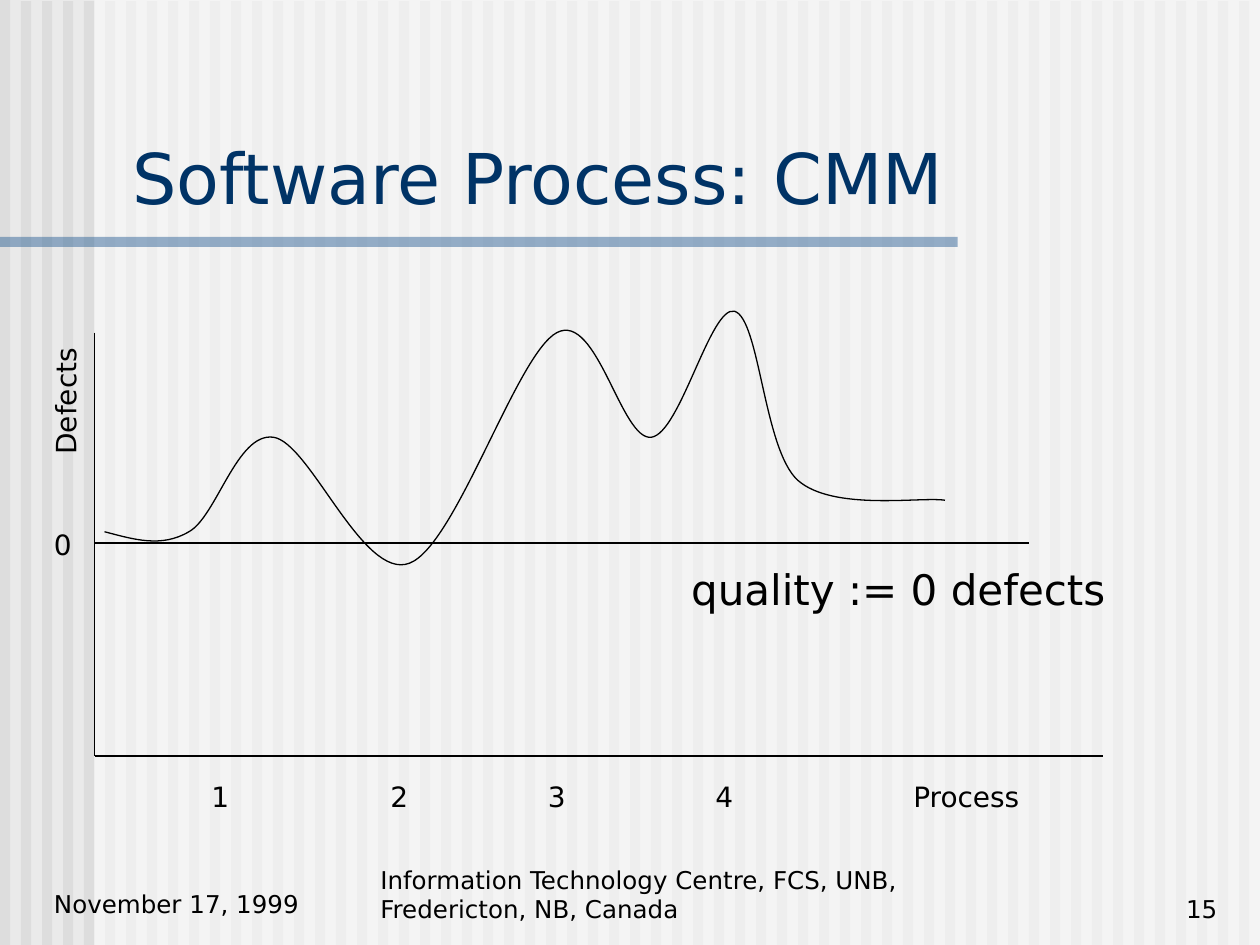
from lxml import etree
from pptx import Presentation
from pptx.dml.color import RGBColor
from pptx.enum import shapes, text
from pptx.oxml.ns import qn
from pptx.util import Inches, Pt

BACKGROUND = RGBColor(0xEA, 0xEA, 0xEA)
STRIPE = RGBColor(0xDD, 0xDD, 0xDD)
WHITE = RGBColor(0xFF, 0xFF, 0xFF)
BLUE = RGBColor(0x33, 0x66, 0x99)
NAVY = RGBColor(0x00, 0x33, 0x66)
BLACK = RGBColor(0x00, 0x00, 0x00)
LEFT, CENTER, RIGHT = text.PP_ALIGN.LEFT, text.PP_ALIGN.CENTER, text.PP_ALIGN.RIGHT
TOP, BOTTOM = text.MSO_ANCHOR.TOP, text.MSO_ANCHOR.BOTTOM

deck = Presentation()
deck.slide_width, deck.slide_height = Inches(10), Inches(7.5)
page = deck.slides.add_slide(deck.slide_layouts[6])
page.background.fill.solid()
page.background.fill.fore_color.rgb = BACKGROUND


def add_band(left, top, width, height, color, opacity=100):
    band = page.shapes.add_shape(shapes.MSO_SHAPE.RECTANGLE, Inches(left), Inches(top),
                                 Inches(width), Inches(height))
    band.shadow.inherit = False
    band.line.fill.background()
    band.fill.solid()
    band.fill.fore_color.rgb = color
    if opacity < 100:
        color_node = band.fill._xPr.find(qn("a:solidFill"))[0]
        etree.SubElement(color_node, qn("a:alpha"), val=str(opacity * 1000))


def add_text(words, left, top, width, height, size=16, align=CENTER, anchor=TOP, color=BLACK):
    box = page.shapes.add_textbox(Inches(left), Inches(top), Inches(width), Inches(height))
    box.text_frame.word_wrap = True
    box.text_frame.vertical_anchor = anchor
    para = box.text_frame.paragraphs[0]
    para.text = words
    para.alignment = align
    para.font.name = "DejaVu Sans"
    para.font.size = Pt(size)
    para.font.color.rgb = color
    return box


# Striped backdrop, lightened right of the margin, and the title rule
for stripe in range(60):
    add_band(stripe / 6, 0.01 if stripe else 0, 0.08, 7.5, STRIPE)
add_band(0.75, 0, 9.26, 7.5, WHITE, opacity=50)
add_band(0, 1.88, 7.6, 0.08, BLUE, opacity=50)

# Footer and title
add_text("November 17, 1999", 0.33, 6.88, 2.49, 0.46, 14, LEFT, BOTTOM)
add_text("Information Technology Centre, FCS, UNB, Fredericton, NB, Canada",
         2.92, 6.88, 4.58, 0.5, 14, LEFT, BOTTOM)
add_text("15", 7.68, 6.88, 2.08, 0.5, 14, RIGHT, BOTTOM)
add_text("Software Process: CMM", 0.95, 1.01, 8.93, 0.77, 40, LEFT, BOTTOM, NAVY)

# Axes and zero line
for x1, y1, x2, y2, weight in [(0.75, 2.64, 0.75, 6, 1),
                               (0.75, 4.31, 8.17, 4.31, 0.75),
                               (0.75, 6, 8.75, 6, 0.75)]:
    axis = page.shapes.add_connector(shapes.MSO_CONNECTOR.STRAIGHT, Inches(x1), Inches(y1),
                                     Inches(x2), Inches(y2))
    axis.line.color.rgb = BLACK
    axis.line.width = Pt(weight)
    etree.SubElement(axis._element.spPr, qn("a:effectLst"))

# Axis labels
add_text("0", 0.33, 4.14, 0.33, 0.37)
for level, left in enumerate([1.58, 3, 4.25, 5.58], start=1):
    add_text(str(level), left, 6.14, 0.33, 0.37)
add_text("Process", 6.67, 6.14, 2, 0.37)
add_text("Defects", -0.19, 3, 1.42, 0.37).rotation = 270

# Defect curve: a start point, then two control points and an end point per segment
curve_points = [
    (0.83, 4.22),
    (1.06, 4.28), (1.28, 4.35), (1.5, 4.22),
    (1.72, 4.1), (1.88, 3.43), (2.17, 3.47),
    (2.46, 3.51), (2.88, 4.61), (3.25, 4.47),
    (3.62, 4.33), (4.1, 2.81), (4.42, 2.64),
    (4.74, 2.47), (4.93, 3.5), (5.17, 3.47),
    (5.4, 3.44), (5.64, 2.42), (5.83, 2.47),
    (6.03, 2.53), (6.06, 3.56), (6.33, 3.81),
    (6.61, 4.06), (7.31, 3.94), (7.5, 3.97),
]
start, *rest = [(Inches(x), Inches(y)) for x, y in curve_points]
builder = page.shapes.build_freeform(*start)
builder.add_line_segments(rest, close=False)
curve = builder.convert_to_shape()
curve.shadow.inherit = False
curve.fill.background()
curve.line.color.rgb = BLACK
curve.line.width = Pt(0.75)

# Turn each three straight segments into one Bezier segment
outline = next(curve._element.iter(qn("a:path")))
segments = outline.findall(qn("a:lnTo"))
for first in range(0, len(segments), 3):
    bezier = etree.SubElement(outline, qn("a:cubicBezTo"))
    for segment in segments[first:first + 3]:
        bezier.append(segment[0])
        outline.remove(segment)

add_text("quality := 0 defects", 4.67, 4.42, 4.92, 0.5, 24)

deck.save("out.pptx")
